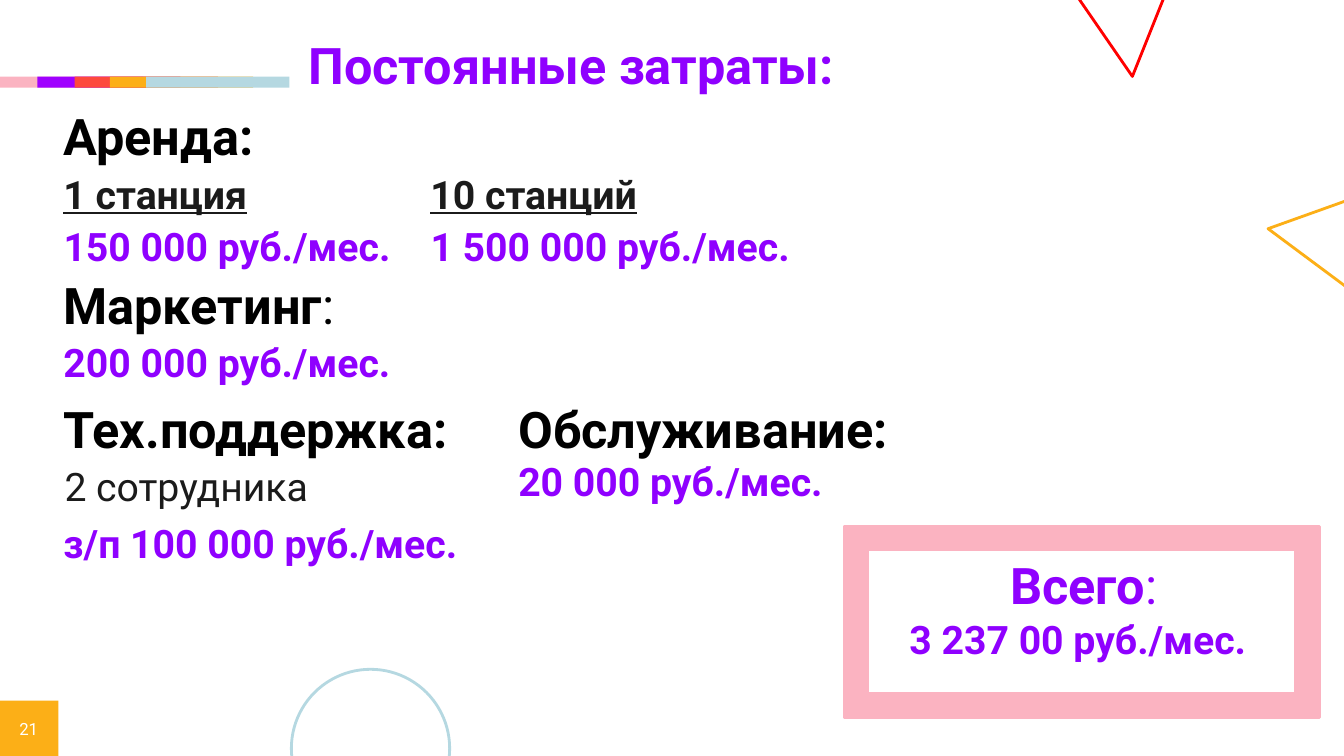
from dataclasses import dataclass

from pptx import Presentation
from pptx.dml.color import RGBColor
from pptx.enum import shapes, text
from pptx.util import Inches, Pt


@dataclass(frozen=True)
class Theme:
    font: str = "Roboto"
    heading_size: int = 36
    detail_size: int = 28
    number_size: int = 12
    line_width: int = 2
    white: str = "FFFFFF"
    black: str = "000000"
    ink: str = "1B1B1B"
    violet: str = "8F00FF"
    purple: str = "9F00FF"
    pink: str = "FBB3C1"
    coral: str = "FD493D"
    red: str = "FF0000"
    orange: str = "FCAF17"
    blue: str = "B5D8E1"


THEME = Theme()
SHAPE = shapes.MSO_SHAPE
LEFT_COLUMN = 0.58
STATIONS_COLUMN = 4.22
SERVICE_COLUMN = 5.09


def add_figure(slide, kind, box, fill, line=None, rotation=0):
    shape = slide.shapes.add_shape(kind, *map(Inches, box))
    shape.shadow.inherit = False
    shape.rotation = rotation
    shape.fill.solid()
    shape.fill.fore_color.rgb = RGBColor.from_string(fill)
    if line:
        shape.line.color.rgb = RGBColor.from_string(line)
        shape.line.width = Pt(THEME.line_width)
    else:
        shape.line.fill.background()


def add_text(slide, box, runs, size, color, middle=False, align=text.PP_ALIGN.LEFT, underline=False):
    """Runs are (words, bold) pairs that share one paragraph."""
    frame = slide.shapes.add_textbox(*map(Inches, box)).text_frame
    frame.word_wrap = True
    frame.margin_left = frame.margin_right = Inches(0.05)
    frame.margin_top = frame.margin_bottom = Inches(0.05)
    frame.vertical_anchor = text.MSO_ANCHOR.MIDDLE if middle else text.MSO_ANCHOR.TOP
    paragraph = frame.paragraphs[0]
    paragraph.alignment = align
    for words, bold in runs:
        run = paragraph.add_run()
        run.text = words
        run.font.name = THEME.font
        run.font.size = Pt(size)
        run.font.bold = bold
        run.font.underline = underline
        run.font.color.rgb = RGBColor.from_string(color)


def add_heading(slide, left, top, width, words, color=THEME.black, light_end=""):
    runs = [(words, True)]
    if light_end:
        runs.append((light_end, False))
    add_text(slide, (left, top, width, 0.7), runs, THEME.heading_size, color, middle=True)


def add_detail(slide, left, top, width, words, color=THEME.violet, bold=True, underline=False):
    add_text(slide, (left, top, width, 0.57), [(words, bold)], THEME.detail_size, color,
             underline=underline)


def add_page_number(slide, number):
    add_figure(slide, SHAPE.RECTANGLE, (-0.01, 6.95, 0.59, 0.55), THEME.orange)
    add_text(slide, (0.03, 7.12, 0.51, 0.22), [(number, False)], THEME.number_size,
             THEME.white, middle=True, align=text.PP_ALIGN.CENTER)


def add_stripes(slide):
    stripes = [(0, THEME.pink), (0.37, THEME.purple), (0.74, THEME.coral),
               (1.09, THEME.orange), (1.45, THEME.blue)]
    for left, color in stripes:
        add_figure(slide, SHAPE.RECTANGLE, (left, 0.76, 1.42, 0.11), color)


def add_outlines(slide):
    triangle = SHAPE.ISOSCELES_TRIANGLE
    add_figure(slide, triangle, (12.73, 1.97, 1.57, 1.18), THEME.white, THEME.orange, 160.3)
    add_figure(slide, triangle, (10.19, -0.78, 1.57, 1.18), THEME.white, THEME.red, 291.8)
    add_figure(slide, SHAPE.OVAL, (2.89, 6.64, 1.57, 1.57), THEME.white, THEME.blue)


def add_rent(slide):
    add_heading(slide, LEFT_COLUMN, 0.99, 2.13, "Аренда:")
    offers = [(LEFT_COLUMN, "1 станция", "150 000 руб./мес."),
              (STATIONS_COLUMN, "10 станций", "1 500 000 руб./мес.")]
    for left, stations, price in offers:
        add_detail(slide, left, 1.64, 2.86, stations, THEME.ink, underline=True)
        add_detail(slide, left, 2.16, 3.78, price)


def add_marketing(slide):
    add_heading(slide, LEFT_COLUMN, 2.67, 4.06, "Маркетинг", light_end=":")
    add_detail(slide, LEFT_COLUMN, 3.31, 3.64, "200 000 руб./мес.")


def add_support_and_service(slide):
    add_heading(slide, LEFT_COLUMN, 3.9, 4.23, "Тех.поддержка:")
    add_detail(slide, LEFT_COLUMN + 0.01, 4.54, 2.67, "2 сотрудника", THEME.ink, bold=False)
    add_detail(slide, LEFT_COLUMN, 5.1, 4.36, "з/п 100 000 руб./мес.")
    add_heading(slide, SERVICE_COLUMN, 3.9, 4.23, "Обслуживание:")
    add_detail(slide, SERVICE_COLUMN, 4.49, 3.41, "20 000 руб./мес.")


def add_total(slide):
    add_figure(slide, SHAPE.FRAME, (8.37, 5.22, 4.72, 1.9), THEME.pink, THEME.pink)
    add_heading(slide, 9.97, 5.45, 1.68, "Всего", THEME.violet, light_end=":")
    add_detail(slide, 8.97, 6.06, 3.53, "3 237 00 руб./мес.")


def main():
    presentation = Presentation()
    presentation.slide_width = Inches(13.33)
    presentation.slide_height = Inches(7.5)
    slide = presentation.slides.add_slide(presentation.slide_layouts[6])
    add_page_number(slide, "21")
    add_stripes(slide)
    add_heading(slide, 3.01, 0.29, 7.13, "Постоянные затраты:", THEME.violet)
    add_outlines(slide)
    add_rent(slide)
    add_marketing(slide)
    add_support_and_service(slide)
    add_total(slide)
    presentation.save("out.pptx")


if __name__ == "__main__":
    main()
